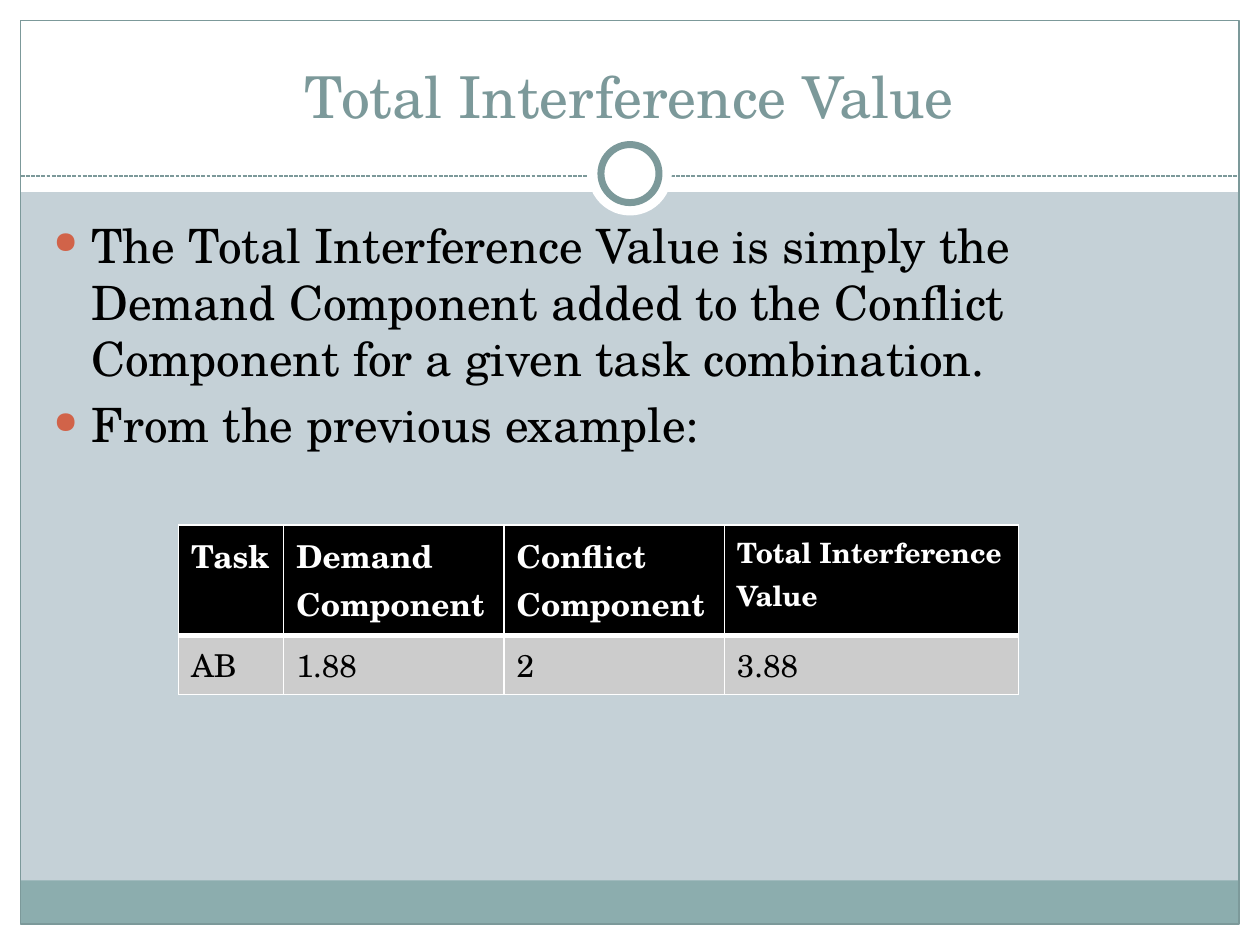
from pptx import Presentation
from pptx.dml.color import RGBColor
from pptx.enum.dml import MSO_LINE
from pptx.enum.shapes import MSO_CONNECTOR, MSO_SHAPE
from pptx.enum.text import MSO_ANCHOR, PP_ALIGN
from pptx.oxml.ns import qn
from pptx.util import Cm, Pt
from lxml import etree

RECT, OVAL = MSO_SHAPE.RECTANGLE, MSO_SHAPE.OVAL
STRAIGHT, DASH = MSO_CONNECTOR.STRAIGHT, MSO_LINE.SQUARE_DOT
BOTTOM, CENTER = MSO_ANCHOR.BOTTOM, PP_ALIGN.CENTER
FONT = "TeX Gyre Schola"
COLORS = {"back": "C5D1D7", "white": "FFFFFF", "black": "000000",
          "teal": "7C999A", "band": "8CADAE", "dot": "D16349",
          "cell": "CCCCCC"}
WIDE, HIGH, EDGE = 25.4, 19.05, 0.42
BULLETS = [
    "The Total Interference Value is simply the Demand Component added "
    "to the Conflict Component for a given task combination.",
    "From the previous example:",
]
ROWS = [["Task", "Demand Component", "Conflict Component",
         "Total Interference Value"],
        ["AB", "1.88", "2", "3.88"]]
COLS = [2.12, 4.44, 4.44, 5.93]
HEIGHTS = [2.23, 1.19]


def rgb(name):
    return RGBColor.from_string(COLORS[name])


def style(para, size, color, bold=False):
    for run in para.runs:
        font = run.font
        font.name, font.size, font.bold = FONT, Pt(size), bold
        font.color.rgb = rgb(color)


def place(shape, *box):
    shape.left, shape.top, shape.width, shape.height = map(Cm, box)


def add_shape(slide, kind, box, fill=None, line=None, width=0.75):
    shape = slide.shapes.add_shape(kind, *map(Cm, box))
    shape.shadow.inherit = False
    if fill:
        shape.fill.solid()
        shape.fill.fore_color.rgb = rgb(fill)
    else:
        shape.fill.background()
    if line:
        shape.line.color.rgb = rgb(line)
        shape.line.width = Pt(width)
    else:
        shape.line.fill.background()


def add_disc(slide, mid, size, **look):
    box = (WIDE / 2 - size / 2, mid - size / 2, size, size)
    add_shape(slide, OVAL, box, "white", **look)


def add_rule(slide, top):
    rule = slide.shapes.add_connector(
        STRAIGHT, Cm(EDGE), Cm(top), Cm(WIDE - EDGE), Cm(top))
    rule.line.color.rgb = rgb("teal")
    rule.line.width = Pt(0.75)
    rule.line.dash_style = DASH
    etree.SubElement(rule._element.spPr, qn("a:effectLst"))


def add_frame(slide):
    inner = WIDE - 2 * EDGE
    for box in [(0, HIGH - EDGE, WIDE, EDGE), (0, 0, WIDE, 3.87),
                (0, 0, EDGE, HIGH), (WIDE - EDGE, 0, EDGE, HIGH)]:
        add_shape(slide, RECT, box, "white")
    add_shape(slide, RECT, (EDGE, 17.75, inner, 0.87), "band")
    add_shape(slide, RECT, (EDGE, EDGE, inner, HIGH - 2 * EDGE), line="teal")
    add_rule(slide, 3.55)
    add_disc(slide, 3.5, 1.69)
    add_disc(slide, 3.5, 1.17, line="teal", width=4)


def set_title(slide, text):
    title = slide.shapes.title
    slide.shapes._spTree.append(title._element)  # bring to front
    place(title, 0.84, 0.62, 23.7, 2.12)
    frame = title.text_frame
    frame.text = text
    frame.vertical_anchor = BOTTOM
    frame.paragraphs[0].alignment = CENTER
    style(frame.paragraphs[0], 33, "teal")


def add_bullet(para):
    props = para._p.get_or_add_pPr()
    props.set("marL", str(Cm(0.76)))
    props.set("indent", str(Cm(-0.76)))
    color = etree.SubElement(props, qn("a:buClr"))
    etree.SubElement(color, qn("a:srgbClr"), val=COLORS["dot"])
    etree.SubElement(props, qn("a:buSzPct"), val="65000")
    etree.SubElement(props, qn("a:buChar"), char="●")


def add_body(slide, lines):
    body = slide.shapes.add_textbox(Cm(0.83), Cm(4.23), Cm(23.62), Cm(12.7))
    frame = body.text_frame
    frame.text = "\n".join(lines)
    frame.word_wrap = True
    for para in frame.paragraphs:
        para.space_before = Pt(5.4)
        add_bullet(para)
        style(para, 27, "black")


def add_border(cell, low):
    """Draw white sides, with the bottom one low points wide."""
    props = cell._tc.get_or_add_tcPr()
    sides = [("lnL", 1), ("lnR", 1), ("lnT", 1), ("lnB", low)]
    for spot, (side, width) in enumerate(sides):
        line = etree.Element(qn(f"a:{side}"), w=str(Pt(width)))
        fill = etree.SubElement(line, qn("a:solidFill"))
        etree.SubElement(fill, qn("a:srgbClr"), val=COLORS["white"])
        props.insert(spot, line)


def add_grid(slide):
    grid = slide.shapes.add_table(
        len(ROWS), len(COLS), Cm(3.6), Cm(10.58),
        Cm(sum(COLS)), Cm(sum(HEIGHTS))).table
    for col, width in zip(grid.columns, COLS):
        col.width = Cm(width)
    for r, texts in enumerate(ROWS):
        grid.rows[r].height = Cm(HEIGHTS[r])
        head = r == 0
        for c, text in enumerate(texts):
            cell = grid.cell(r, c)
            cell.text = text
            cell.fill.solid()
            cell.fill.fore_color.rgb = rgb("black" if head else "cell")
            size = 16 if head and c == len(COLS) - 1 else 18
            style(cell.text_frame.paragraphs[0], size,
                  "white" if head else "black", head)
            add_border(cell, 3 if head else 1)


def main():
    deck = Presentation()
    deck.slide_width, deck.slide_height = Cm(WIDE), Cm(HIGH)
    slide = deck.slides.add_slide(deck.slide_layouts[5])
    slide.background.fill.solid()
    slide.background.fill.fore_color.rgb = rgb("back")
    add_frame(slide)
    set_title(slide, "Total Interference Value")
    add_body(slide, BULLETS)
    add_grid(slide)
    deck.save("out.pptx")


if __name__ == "__main__":
    main()
